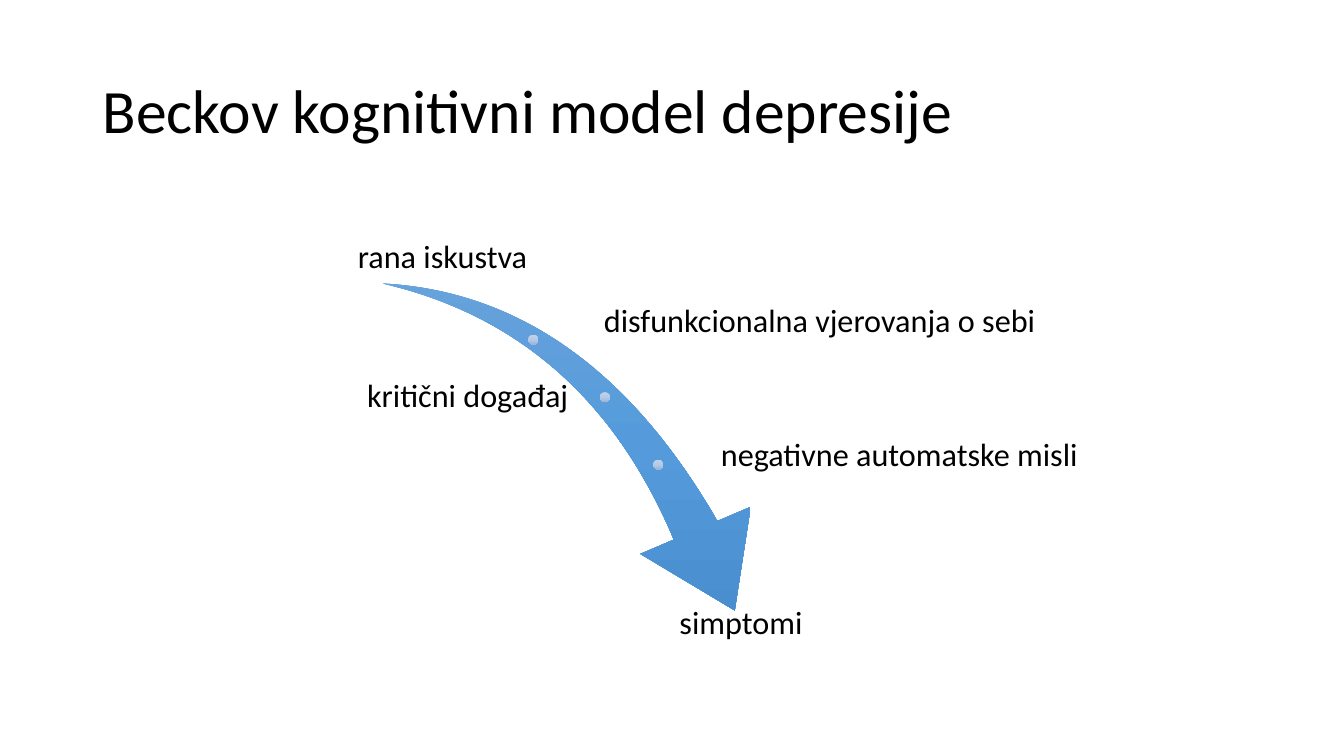
import copy
from dataclasses import dataclass

import pptx
import pptx.dml.color
import pptx.enum.shapes
import pptx.enum.text
import pptx.oxml.ns
import pptx.util

Inches = pptx.util.Inches
Kind = pptx.enum.shapes.MSO_SHAPE
Align = pptx.enum.text.PP_ALIGN
Anchor = pptx.enum.text.MSO_ANCHOR


@dataclass(frozen=True)
class Theme:
    font: str = "Calibri"
    ink: str = "000000"
    head: int = 44
    label: int = 23
    after: int = 8
    arrow: tuple = ("71A6DB", "559BDB", "448ACA")
    dot: tuple = ("C0D2EB", "B3CBE9", "9BB4D3")


class Page:
    def __init__(self, deck, theme):
        self.theme = theme
        self.slide = deck.slides.add_slide(deck.slide_layouts[5])

    def style(self, frame, text, size, align, anchor):
        frame.word_wrap = True
        frame.auto_size = pptx.enum.text.MSO_AUTO_SIZE.NONE
        frame.vertical_anchor = anchor
        frame.text = text
        para = frame.paragraphs[0]
        para.alignment = align
        para.line_spacing = 0.9
        font = para.runs[0].font
        font.name = self.theme.font
        font.size = pptx.util.Pt(size)
        font.color.rgb = pptx.dml.color.RGBColor.from_string(self.theme.ink)
        return para

    def title(self, text, left, top, width, height):
        box = self.slide.shapes.title
        box.left, box.top = Inches(left), Inches(top)
        box.width, box.height = Inches(width), Inches(height)
        self.style(box.text_frame, text, self.theme.head, Align.LEFT, Anchor.MIDDLE)

    def label(self, text, left, top, width, align, anchor):
        box = self.slide.shapes.add_textbox(
            Inches(left), Inches(top), Inches(width), Inches(0.76))
        frame = box.text_frame
        frame.margin_left = frame.margin_right = Inches(0.03)
        frame.margin_top = frame.margin_bottom = Inches(0.03)
        para = self.style(frame, text, self.theme.label, align, anchor)
        para.space_after = pptx.util.Pt(self.theme.after)

    def shape(self, kind, left, top, width, height, tones):
        item = self.slide.shapes.add_shape(
            kind, Inches(left), Inches(top), Inches(width), Inches(height))
        item.shadow.inherit = False
        item.line.fill.background()
        self.shade(item, tones)
        return item

    def shade(self, item, tones):
        """Fill from top to bottom with evenly spaced tones."""
        item.fill.gradient()
        item.fill.gradient_angle = 270
        grad = item._element.spPr.find(pptx.oxml.ns.qn("a:gradFill"))
        grad.set("rotWithShape", "0")
        stops = grad.find(pptx.oxml.ns.qn("a:gsLst"))
        stops.append(copy.deepcopy(stops[0]))
        for i, (stop, tone) in enumerate(zip(item.fill.gradient_stops, tones)):
            stop.position = i / (len(tones) - 1)
            stop.color.rgb = pptx.dml.color.RGBColor.from_string(tone)


def main():
    deck = pptx.Presentation()
    deck.slide_width, deck.slide_height = Inches(13.33), Inches(7.5)
    theme = Theme()
    page = Page(deck, theme)

    # Title
    page.title("Beckov kognitivni model depresije", 0.92, 0.4, 11.5, 1.45)

    # Curved arrow
    arrow = page.shape(Kind.SWOOSH_ARROW, 3.7, 2.94, 4.11, 2.86, theme.arrow)
    arrow.rotation = 73.3
    arrow.adjustments[0] = 0.163
    arrow.adjustments[1] = 0.314

    # Dots along the arrow
    for left, top in ((5.24, 3.32), (5.95, 3.89), (6.48, 4.56)):
        page.shape(Kind.OVAL, left, top, 0.1, 0.1, theme.dot)

    # Stages of the model
    stages = (
        ("rana iskustva", 3.42, 2, 1.94, Align.CENTER, Anchor.BOTTOM),
        ("disfunkcionalna vjerovanja o sebi", 5.96, 2.82, 5.34, Align.LEFT, Anchor.MIDDLE),
        ("kritični događaj", 3.42, 3.56, 2.25, Align.RIGHT, Anchor.MIDDLE),
        ("negativne automatske misli", 7.12, 4.14, 3.94, Align.LEFT, Anchor.MIDDLE),
        ("simptomi", 6.04, 5.99, 2.62, Align.CENTER, Anchor.TOP),
    )
    for stage in stages:
        page.label(*stage)

    deck.save("out.pptx")


if __name__ == "__main__":
    main()
